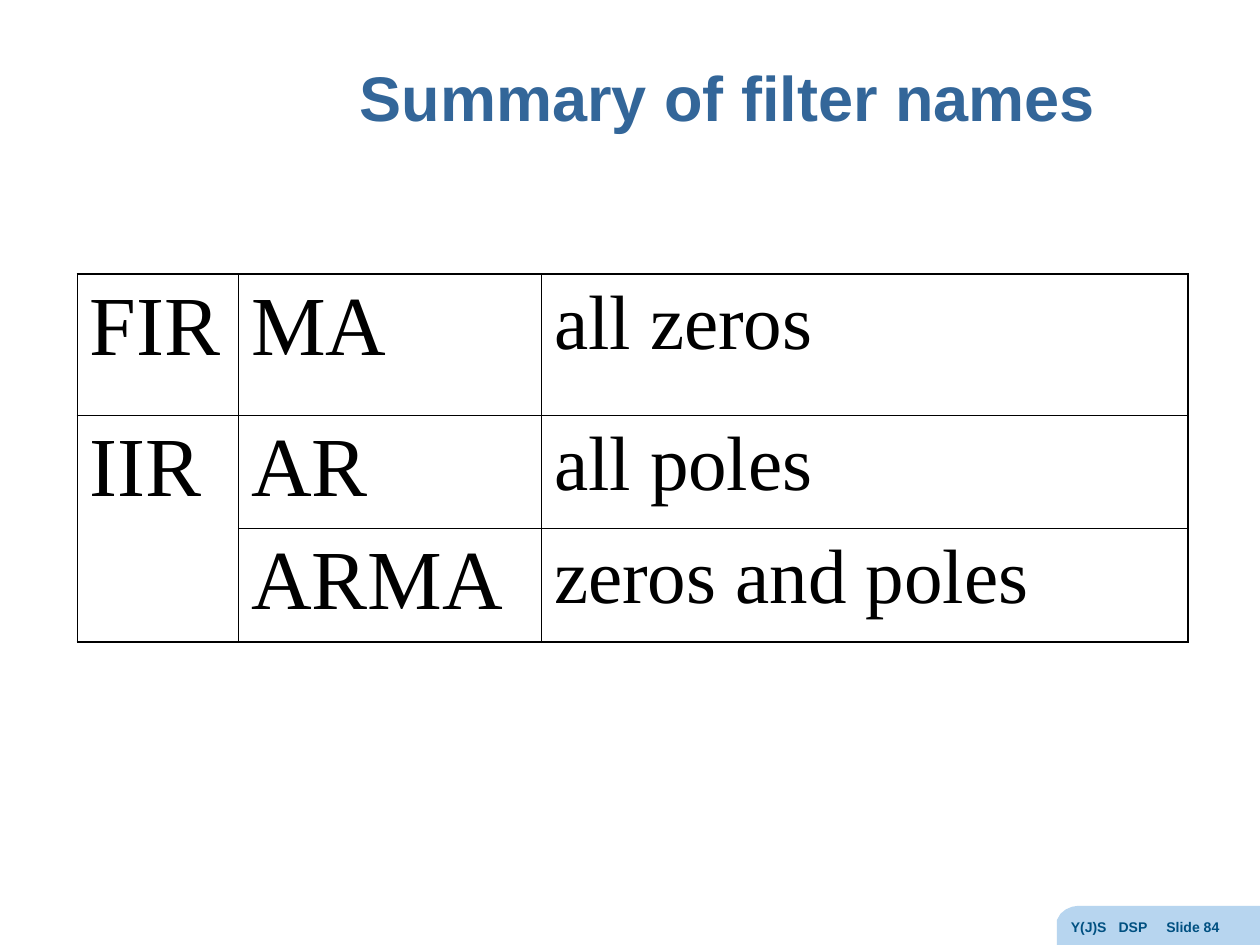
import pptx
import pptx.dml.color
import pptx.enum.text
import pptx.oxml
import pptx.oxml.ns
import pptx.util
from lxml import etree

Pt = pptx.util.Pt
ALIGN = pptx.enum.text.PP_ALIGN
ANCHOR = pptx.enum.text.MSO_ANCHOR

TITLE_FONT = dict(name="Arial", size=Pt(36), bold=True)
FOOTER_FONT = dict(name="Arial", size=Pt(8), bold=True)
TERM_FONT = dict(name="Times New Roman", size=Pt(48), bold=False)
MEANING_FONT = dict(TERM_FONT, size=Pt(44))


def colour(value):
    return pptx.dml.color.RGBColor.from_string(value)


def add_span(para, text, font_format, hex_colour):
    span = para.add_run()
    span.text = text
    for name, value in font_format.items():
        setattr(span.font, name, value)
    span.font.color.rgb = colour(hex_colour)


def add_text(page, box, text, font_format, hex_colour):
    shape = page.shapes.add_textbox(*map(Pt, box))
    shape.text_frame.word_wrap = True
    para = shape.text_frame.paragraphs[0]
    add_span(para, text, font_format, hex_colour)
    return shape.text_frame, para


def add_title(page, box):
    frame, para = add_text(page, box, "Summary of filter names", TITLE_FONT, "336699")
    frame.vertical_anchor = ANCHOR.MIDDLE
    para.alignment = ALIGN.CENTER
    para.line_spacing = 0.9


def add_footer(page, box):
    left, top, width, height = box
    right, bottom = left + width, top + height

    # Tab with a rounded upper left corner
    corner = [(0, 11), (0, 8), (2, 4.5), (5, 2), (8.5, 0.5), (11.5, 0)]
    outline = [(right, bottom), (left, bottom)]
    outline += [(left + x, top + y) for x, y in corner]
    builder = page.shapes.build_freeform(Pt(right), Pt(top), scale=1.0)
    builder.add_line_segments([(Pt(x), Pt(y)) for x, y in outline], close=True)
    tab = builder.convert_to_shape()
    tab.shadow.inherit = False
    tab.fill.solid()
    tab.fill.fore_color.rgb = colour("B7D5EF")
    tab.line.fill.background()

    # Label in three columns held by tab stops
    label_box = (left + 0.8, top + 3.5, width - 0.8, height - 3.5)
    _, para = add_text(page, label_box, "Y(J)S\tDSP\tSlide 84", FOOTER_FONT, "005081")
    properties = para._p.get_or_add_pPr()
    stops = etree.SubElement(properties, pptx.oxml.ns.qn("a:tabLst"))
    for position in (27.3, 54.6):
        etree.SubElement(stops, pptx.oxml.ns.qn("a:tab"),
                         pos=str(Pt(position)), algn="l")


def add_borders(cell, hex_colour, width):
    properties = cell._tc.get_or_add_tcPr()
    for side in "LRTB":
        properties.append(pptx.oxml.parse_xml(
            f'<a:ln{side} {pptx.oxml.ns.nsdecls("a")} w="{Pt(width)}">'
            f'<a:solidFill><a:srgbClr val="{hex_colour}"/></a:solidFill>'
            f'</a:ln{side}>'))


def add_filter_table(page, box):
    rows = [("FIR", "MA", "all zeros"),
            ("IIR", "AR", "all poles"),
            ("", "ARMA", "zeros and poles")]
    column_widths = (92.2, 173, 369.6)
    row_heights = (80.6, 60.4, 60.4)
    fonts = (TERM_FONT, TERM_FONT, MEANING_FONT)

    table = page.shapes.add_table(len(rows), len(fonts), *map(Pt, box)).table
    table.first_row = table.horz_banding = False
    for column, width in zip(table.columns, column_widths):
        column.width = Pt(width)
    for row, height in zip(table.rows, row_heights):
        row.height = Pt(height)

    for row, texts in zip(table.rows, rows):
        for cell, text, font_format in zip(row.cells, texts, fonts):
            add_borders(cell, "000000", 1)
            cell.fill.background()
            if text:
                add_span(cell.text_frame.paragraphs[0], text, font_format, "000000")

    # IIR covers both AR and ARMA
    table.cell(1, 0).merge(table.cell(2, 0))


def main():
    deck = pptx.Presentation()
    deck.slide_width, deck.slide_height = Pt(720), Pt(540)
    page = deck.slides.add_slide(deck.slide_layouts[6])
    add_footer(page, (604, 517.7, 116, 22.3))
    add_title(page, (152.6, 13, 526.3, 90))
    add_filter_table(page, (44.2, 156.7, 634.8, 201.4))
    deck.save("out.pptx")


if __name__ == "__main__":
    main()
